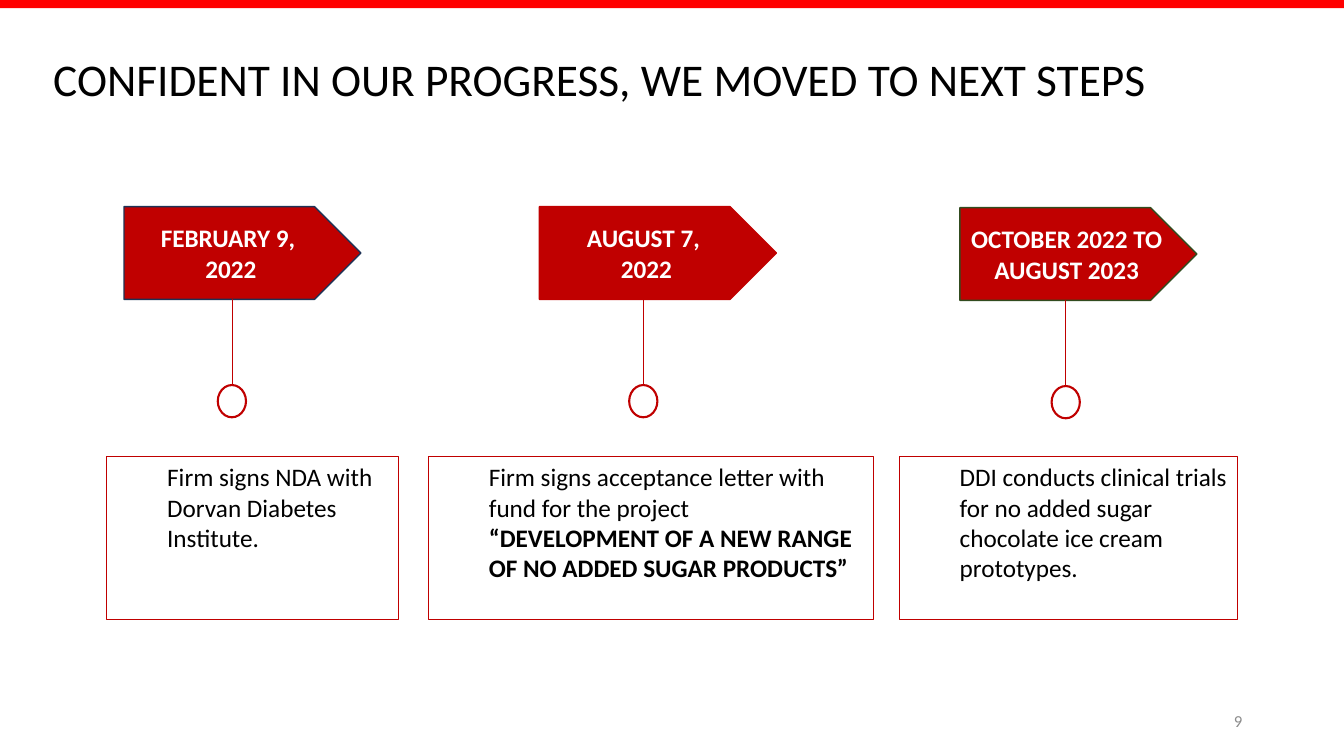
from lxml.etree import SubElement
from pptx import Presentation
from pptx.dml.color import RGBColor
from pptx.enum.shapes import MSO_CONNECTOR as Connector, MSO_SHAPE as Shape
from pptx.enum.text import MSO_ANCHOR as Anchor, PP_ALIGN as Align
from pptx.oxml.ns import qn
from pptx.util import Inches, Pt

BLACK = RGBColor(0x00, 0x00, 0x00)
WHITE = RGBColor(0xFF, 0xFF, 0xFF)
GREY = RGBColor(0x8C, 0x8C, 0x8C)
BRIGHT_RED = RGBColor(0xFF, 0x00, 0x00)
RED = RGBColor(0xC0, 0x00, 0x00)
NAVY = RGBColor(0x1E, 0x32, 0x56)
GREEN = RGBColor(0x31, 0x4C, 0x1F)

# Content: each text is a list of paragraphs, each paragraph a list of (words, bold)
TITLE = "CONFIDENT IN OUR PROGRESS, WE MOVED TO NEXT STEPS"
PAGE_NUMBER = "9"
STEPS = [
    {"date": ["FEBRUARY 9, ", "2022"], "outline": NAVY,
     "text": [("Firm signs NDA with Dorvan Diabetes Institute.", False)],
     "arrow_left": 1.23, "stem": 2.3, "box": (1.06, 2.89), "drop": 0},
    {"date": ["AUGUST 7, ", "2022"], "outline": RED,
     "text": [("Firm signs acceptance letter with fund for the project ", False),
              ("“DEVELOPMENT OF A NEW RANGE OF NO ADDED SUGAR PRODUCTS”", True)],
     "arrow_left": 5.35, "stem": 6.38, "box": (4.25, 4.41), "drop": 0},
    {"date": ["OCTOBER 2022 TO AUGUST 2023"], "outline": GREEN,
     "text": [("DDI conducts clinical trials for no added sugar "
               "chocolate ice cream prototypes.", False)],
     "arrow_left": 9.52, "stem": 10.57, "box": (8.92, 3.35), "drop": 0.01},
]

# Rows shared by all steps, in inches
WIDTH, HEIGHT = 13.33, 7.5
ARROW_TOP, ARROW_WIDTH, ARROW_HEIGHT = 2.05, 2.35, 0.92
STEM_HEIGHT = 0.85
RING_WIDTH, RING_HEIGHT = 0.28, 0.32
BOX_TOP, BOX_HEIGHT, BOX_INDENT = 4.53, 1.62, 0.5

deck = Presentation()
deck.slide_width, deck.slide_height = Inches(WIDTH), Inches(HEIGHT)
page = deck.slides.add_slide(deck.slide_layouts[6])


def write(box, paragraphs, size, color, anchor, align=Align.LEFT, **layout):
    frame = box.text_frame
    frame.word_wrap = True
    frame.vertical_anchor = anchor
    for index, spans in enumerate(paragraphs):
        para = frame.paragraphs[0] if index == 0 else frame.add_paragraph()
        para.alignment = align
        for name, value in layout.items():
            setattr(para, name, value)
        for words, bold in spans:
            span = para.add_run()
            span.text = words
            style = {"name": "Calibri", "size": Pt(size), "bold": bold}
            for name, value in style.items():
                setattr(span.font, name, value)
            span.font.color.rgb = color


def add_shape(kind, left, top, width, height, fill=None, line=None, weight=1):
    shape = page.shapes.add_shape(kind, *map(Inches, (left, top, width, height)))
    shape.shadow.inherit = False
    if fill is None:
        shape.fill.background()
    else:
        shape.fill.solid()
        shape.fill.fore_color.rgb = fill
    if line is None:
        shape.line.fill.background()
    else:
        shape.line.color.rgb = line
        shape.line.width = Pt(weight)
    return shape


def add_text(left, top, width, height, words, size, color, **layout):
    box = page.shapes.add_textbox(*map(Inches, (left, top, width, height)))
    write(box, [[(words, False)]], size, color, Anchor.MIDDLE, **layout)


def add_stem(x, top, bottom):
    stem = page.shapes.add_connector(
        Connector.STRAIGHT, *map(Inches, (x, top, x, bottom)))
    stem.line.color.rgb = RED
    stem.line.width = Pt(0.5)
    SubElement(stem._element.spPr, qn("a:effectLst"))


# Top band and title
add_shape(Shape.RECTANGLE, 0, 0, WIDTH, 0.08, fill=BRIGHT_RED)
add_text(0.43, 0.31, 11.14, 1, TITLE, 32.4, BLACK, line_spacing=0.9)

# Timeline: date arrow, stem with ring, description box
for step in STEPS:
    arrow_top = ARROW_TOP + step["drop"]
    arrow = add_shape(Shape.PENTAGON, step["arrow_left"], arrow_top,
                      ARROW_WIDTH, ARROW_HEIGHT, RED, step["outline"])
    write(arrow, [[(line, True)] for line in step["date"]], 18, WHITE,
          Anchor.MIDDLE, Align.CENTER)

    stem_top = arrow_top + ARROW_HEIGHT
    ring_top = stem_top + STEM_HEIGHT
    add_stem(step["stem"], stem_top, ring_top)
    add_shape(Shape.FLOWCHART_CONNECTOR, step["stem"] - RING_WIDTH / 2, ring_top,
              RING_WIDTH, RING_HEIGHT, line=RED, weight=1.5)

    left, width = step["box"]
    box = add_shape(Shape.RECTANGLE, left, BOX_TOP, width, BOX_HEIGHT,
                    line=RED, weight=0.75)
    write(box, [step["text"]], 18, BLACK, Anchor.TOP)
    properties = box.text_frame.paragraphs[0]._p.get_or_add_pPr()
    properties.set("marL", str(Inches(BOX_INDENT)))
    properties.set("indent", "0")

# Page number
add_text(9.42, 6.95, 3, 0.4, PAGE_NUMBER, 12, GREY, align=Align.RIGHT)

deck.save("out.pptx")
